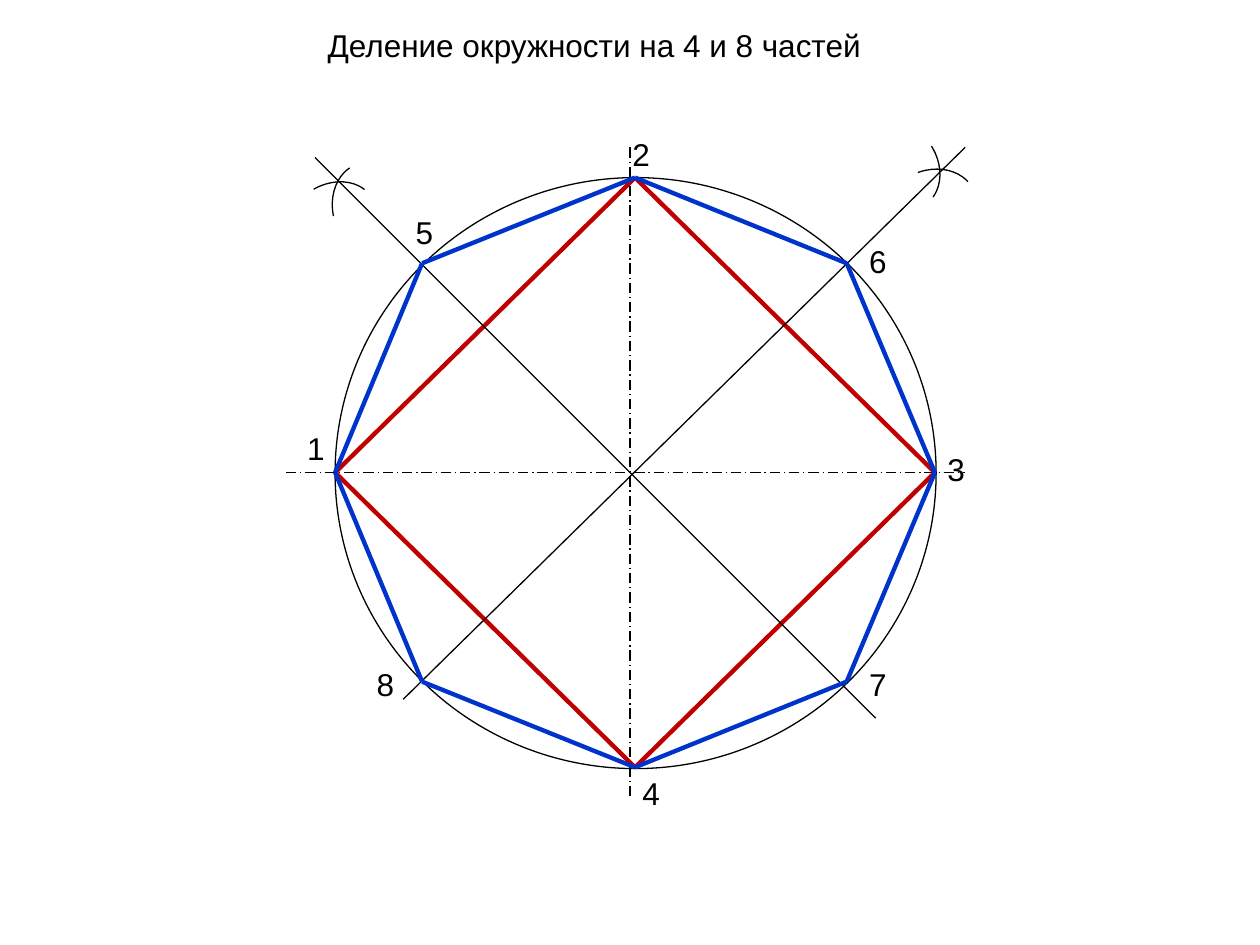
"""Build a slide on dividing a circle into 4 and 8 equal parts."""
from lxml.etree import SubElement
from pptx import Presentation
from pptx.dml.color import RGBColor
from pptx.enum.dml import MSO_LINE
from pptx.enum.shapes import MSO_CONNECTOR, MSO_SHAPE
from pptx.enum.text import MSO_ANCHOR, MSO_AUTO_SIZE, PP_ALIGN
from pptx.oxml.ns import qn
from pptx.util import Inches, Pt

BLACK, RED, BLUE = "000000", "C00000", "0033CC"
THIN, THICK = 0.75, 2.5
TITLE = "Деление окружности на 4 и 8 частей"
TITLE_BOX = (2.5, 0.16, 6.02, 0.4)
CIRCLE_BOX = (2.66, 1.41, 4.77, 4.69)
VERTICES = {
    "1": (2.66, 3.75), "5": (3.35, 2.09), "2": (5.04, 1.41), "6": (6.72, 2.09),
    "3": (7.42, 3.75), "7": (6.72, 5.41), "4": (5.04, 6.09), "8": (3.35, 5.41),
}
SQUARE, OCTAGON = "1234", "15263748"
AXES = [((5, 1.17), (5, 6.33)), ((2.27, 3.75), (7.66, 3.75))]
BISECTORS = [((3.2, 5.55), (7.66, 1.17)), ((6.95, 5.7), (2.5, 1.25))]
ARC_SIZE = (0.72, 0.58)
ARC_ANGLES = (160.371, 206.554)
ARCS = [(6.79, 1.03, 59.5), (7.03, 1.35, 341.6), (2.57, 1.36, 259.8), (2.28, 1.46, 331.6)]
LABELS = [
    ("1", 2.34, 3.36, 0.23), ("2", 4.92, 1.02, 0.47), ("3", 7.42, 3.52, 0.39),
    ("4", 5, 6.09, 0.47), ("5", 3.2, 1.64, 0.31), ("6", 6.8, 1.87, 0.31),
    ("7", 6.8, 5.23, 0.47), ("8", 2.89, 5.23, 0.39),
]
LABEL_HEIGHT = 0.4


def color(value):
    return RGBColor.from_string(value)


def inches(values):
    return [Inches(value) for value in values]


def style_line(line, line_color, width, dash=None):
    line.color.rgb = color(line_color)
    line.width = Pt(width)
    if dash:
        line.dash_style = dash


def add_line(slide, start, end, line_color=BLACK, width=THIN, dash=None):
    connector = slide.shapes.add_connector(MSO_CONNECTOR.STRAIGHT, *inches(start + end))
    style_line(connector.line, line_color, width, dash)
    SubElement(connector._element.spPr, qn("a:effectLst"))


def add_polygon(slide, names, line_color):
    for start, end in zip(names, names[1:] + names[0]):
        add_line(slide, VERTICES[start], VERTICES[end], line_color, THICK)


def add_outline(slide, kind, box):
    shape = slide.shapes.add_shape(kind, *inches(box))
    shape.shadow.inherit = False
    shape.fill.background()
    style_line(shape.line, BLACK, THIN)
    return shape


def add_arc(slide, left, top, rotation):
    arc = add_outline(slide, MSO_SHAPE.ARC, (left, top) + ARC_SIZE)
    arc.adjustments[0], arc.adjustments[1] = ARC_ANGLES
    arc.rotation = rotation


def write_text(shape, text, auto_size):
    text_frame = shape.text_frame
    text_frame.text = text
    text_frame.word_wrap = True
    text_frame.auto_size = auto_size
    text_frame.vertical_anchor = MSO_ANCHOR.TOP
    paragraph = text_frame.paragraphs[0]
    paragraph.alignment = PP_ALIGN.LEFT
    font = paragraph.runs[0].font
    font.name, font.size = "Arial", Pt(18)
    font.color.rgb = color(BLACK)


def main():
    presentation = Presentation()
    presentation.slide_width, presentation.slide_height = inches((10, 7.5))
    slide = presentation.slides.add_slide(presentation.slide_layouts[5])

    title = slide.shapes.title
    title.left, title.top, title.width, title.height = inches(TITLE_BOX)
    write_text(title, TITLE, MSO_AUTO_SIZE.NONE)

    add_outline(slide, MSO_SHAPE.OVAL, CIRCLE_BOX)
    for start, end in AXES:
        add_line(slide, start, end, dash=MSO_LINE.LONG_DASH_DOT)
    add_polygon(slide, SQUARE, RED)
    for start, end in BISECTORS:
        add_line(slide, start, end)
    for arc in ARCS:
        add_arc(slide, *arc)
    for text, left, top, width in LABELS:
        label = slide.shapes.add_textbox(*inches((left, top, width, LABEL_HEIGHT)))
        write_text(label, text, MSO_AUTO_SIZE.SHAPE_TO_FIT_TEXT)
    add_polygon(slide, OCTAGON, BLUE)

    presentation.save("out.pptx")


if __name__ == "__main__":
    main()
